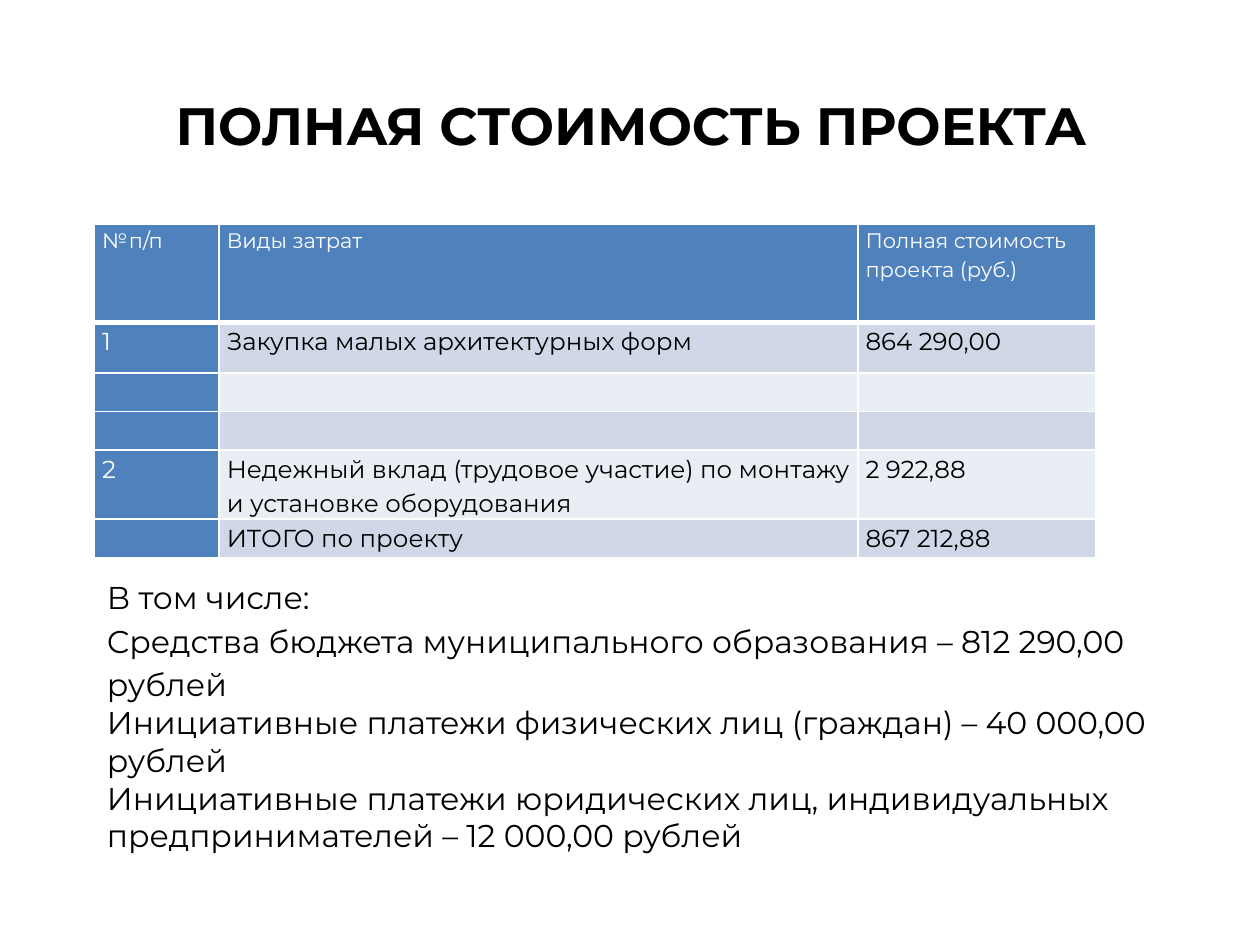
import pptx
import pptx.dml.color
import pptx.enum.text
import pptx.oxml
import pptx.oxml.ns
import pptx.util

Inches = pptx.util.Inches
COLORS = {
    "text": "000000",
    "light": "FFFFFF",
    "accent": "4F81BD",
    "odd": "D0D8E8",
    "even": "E9EDF4",
}
COST_ROWS = [
    ("№п/п", "Виды затрат", "Полная стоимость проекта (руб.)"),
    ("1", "Закупка малых архитектурных форм", "864 290,00"),
    ("", "", ""),
    ("", "", ""),
    ("2", "Недежный вклад (трудовое участие) по монтажу и установке оборудования", "2 922,88"),
    ("", "ИТОГО по проекту", "867 212,88"),
]
COLUMN_WIDTHS = [0.99, 5.07, 1.89]
ROW_HEIGHTS = [0.78, 0.4, 0.3, 0.3, 0.55, 0.26]
FUNDING = [
    ("В том числе:", None),
    ("Средства бюджета муниципального образования – 812 290,00 рублей", 1.15),
    ("Инициативные платежи физических лиц (граждан) – 40 000,00 рублей", None),
    ("Инициативные платежи юридических лиц, индивидуальных предпринимателей – 12 000,00 рублей", None),
]


class SlideBuilder:
    font_name = "Montserrat"

    def __init__(self, slide):
        self.slide = slide

    def apply(self, target, values):
        for name, value in values.items():
            setattr(target, name, value)

    def add_words(self, paragraph, text, size, color="text", bold=False, spacing=None):
        run = paragraph.add_run()
        run.text = text
        values = {"name": self.font_name, "size": pptx.util.Pt(size), "bold": bold}
        self.apply(run.font, values)
        run.font.color.rgb = pptx.dml.color.RGBColor.from_string(COLORS[color])
        if spacing:
            paragraph.line_spacing = spacing

    def title(self, text, left, top, width, height):
        shape = self.slide.shapes.title
        self.apply(shape, {
            "left": Inches(left), "top": Inches(top),
            "width": Inches(width), "height": Inches(height),
        })
        self.apply(shape.text_frame, {
            "word_wrap": True,
            "vertical_anchor": pptx.enum.text.MSO_ANCHOR.MIDDLE,
        })
        paragraph = shape.text_frame.paragraphs[0]
        paragraph.alignment = pptx.enum.text.PP_ALIGN.CENTER
        self.add_words(paragraph, text, 30, bold=True)

    def cell_borders(self, cell, bottom_width):
        properties = cell._tc.get_or_add_tcPr()
        namespace = pptx.oxml.ns.nsdecls("a")
        widths = {"lnL": 1, "lnR": 1, "lnT": 1, "lnB": bottom_width}
        for position, (tag, width) in enumerate(widths.items()):
            line = pptx.oxml.parse_xml(
                f'<a:{tag} {namespace} w="{pptx.util.Pt(width)}"><a:solidFill>'
                f'<a:srgbClr val="{COLORS["light"]}"/></a:solidFill></a:{tag}>'
            )
            properties.insert(position, line)

    def cell(self, cell, text, row, column):
        is_heading = row == 0 or column == 0
        fill = "accent" if is_heading else "odd" if row % 2 else "even"
        self.apply(cell, {
            "margin_left": Inches(0.06), "margin_right": Inches(0.06),
            "margin_top": 0, "margin_bottom": 0,
        })
        cell.fill.solid()
        cell.fill.fore_color.rgb = pptx.dml.color.RGBColor.from_string(COLORS[fill])
        self.cell_borders(cell, 3 if row == 0 else 1)
        if text:
            self.add_words(
                cell.text_frame.paragraphs[0], text, 12 if row == 0 else 14,
                "light" if is_heading else "text", spacing=1.15,
            )

    def table(self, rows, left, top, widths, heights):
        table = self.slide.shapes.add_table(
            len(rows), len(widths), Inches(left), Inches(top),
            Inches(sum(widths)), Inches(sum(heights)),
        ).table
        for column, width in zip(table.columns, widths):
            column.width = Inches(width)
        for row, height in zip(table.rows, heights):
            row.height = Inches(height)
        for row, texts in enumerate(rows):
            for column, text in enumerate(texts):
                self.cell(table.cell(row, column), text, row, column)

    def text(self, lines, left, top, width, height):
        shape = self.slide.shapes.add_textbox(
            Inches(left), Inches(top), Inches(width), Inches(height)
        )
        frame = shape.text_frame
        self.apply(frame, {
            "word_wrap": True,
            "auto_size": pptx.enum.text.MSO_AUTO_SIZE.SHAPE_TO_FIT_TEXT,
        })
        for index, (text, spacing) in enumerate(lines):
            paragraph = frame.add_paragraph() if index else frame.paragraphs[0]
            self.add_words(paragraph, text, 18, spacing=spacing)


def main():
    presentation = pptx.Presentation()
    presentation.slide_width = Inches(10)
    presentation.slide_height = Inches(7.5)
    slide = presentation.slides.add_slide(presentation.slide_layouts[5])
    builder = SlideBuilder(slide)
    builder.title("ПОЛНАЯ СТОИМОСТЬ ПРОЕКТА", 0.51, 0.68, 9, 0.62)
    builder.table(COST_ROWS, 0.75, 1.78, COLUMN_WIDTHS, ROW_HEIGHTS)
    builder.text(FUNDING, 0.75, 4.54, 8.5, 1.96)
    presentation.save("out.pptx")


if __name__ == "__main__":
    main()
